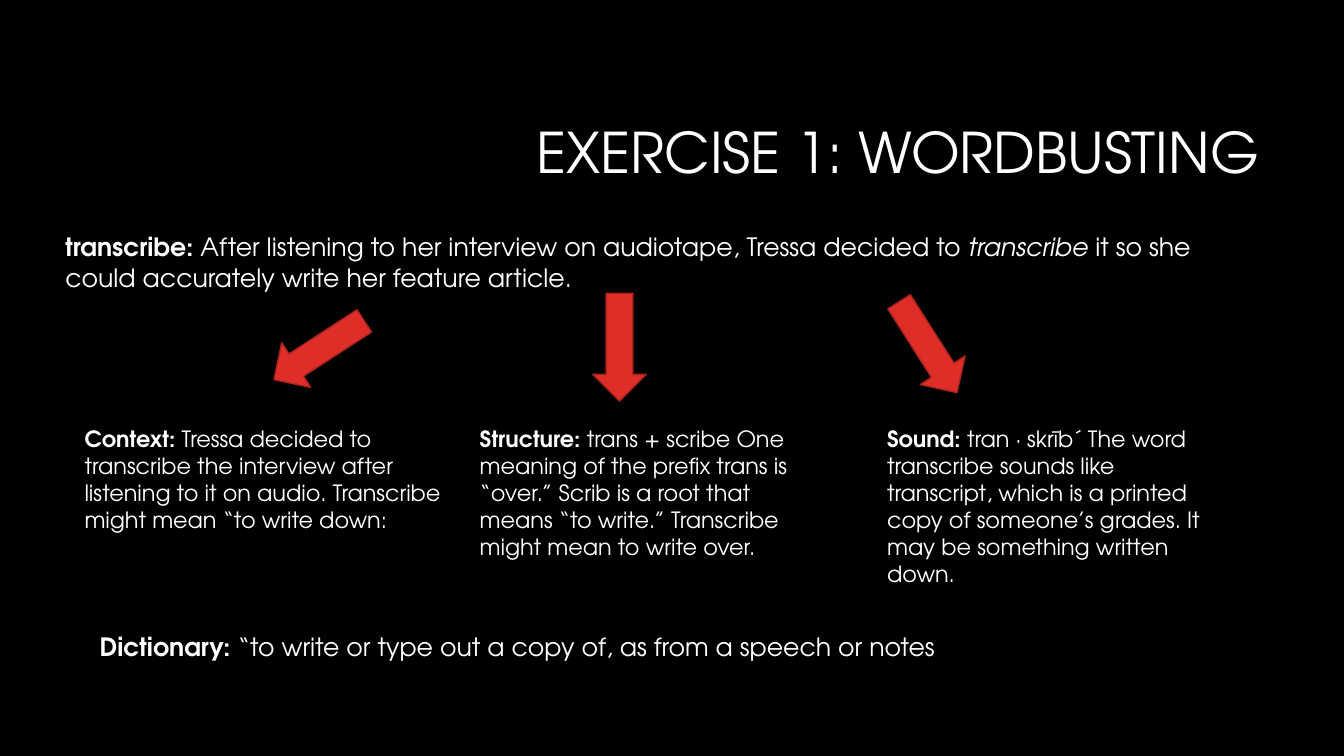
from pptx import Presentation
from pptx.dml.color import RGBColor
from pptx.enum.shapes import MSO_SHAPE
from pptx.enum.text import MSO_ANCHOR, MSO_AUTO_SIZE, PP_ALIGN
from pptx.util import Inches, Pt

ARROW = MSO_SHAPE.DOWN_ARROW
MIDDLE = MSO_ANCHOR.MIDDLE
GROW = MSO_AUTO_SIZE.SHAPE_TO_FIT_TEXT
FIXED = MSO_AUTO_SIZE.NONE
RIGHT = PP_ALIGN.RIGHT

FONT = "TeX Gyre Adventor"
HEX = {"back": "000000", "text": "FFFFFF", "arrow": "DF2E28", "edge": "A5221E"}
COLOR = {name: RGBColor.from_string(code) for name, code in HEX.items()}


def add_run(para, text, size, **style):
    run = para.add_run()
    run.text = text
    run.font.color.rgb = COLOR["text"]
    for key, value in {"name": FONT, "size": Pt(size), **style}.items():
        setattr(run.font, key, value)


deck = Presentation()
deck.slide_width, deck.slide_height = Inches(13.33), Inches(7.5)
slide = deck.slides.add_slide(deck.slide_layouts[5])
slide.background.fill.solid()
slide.background.fill.fore_color.rgb = COLOR["back"]

# Title
title = slide.shapes.title
title.left, title.top = Inches(3.17), Inches(0.84)
title.width, title.height = Inches(9.42), Inches(1.41)
frame = title.text_frame
for key, value in {"vertical_anchor": MIDDLE, "word_wrap": True,
                   "auto_size": FIXED}.items():
    setattr(frame, key, value)
para = frame.paragraphs[0]
para.alignment = RIGHT
para.line_spacing = 0.9
add_run(para, "EXERCISE 1: WORDBUSTING", 40)

# Sentence, three clues and definition: box, size, label, (text, italic) parts
ROW = 4.17
notes = [
    ((0.55, 2.25, 11.9, 0.71), 18, "transcribe: ", [
        ("After listening to her interview on audiotape, Tressa decided to ", False),
        ("transcribe", True),
        (" it so she could accurately write her feature article.", False)]),
    ((0.74, ROW, 3.76, 1.45), 16, "Context: ", [
        ("Tressa decided to transcribe the interview after listening to it on "
         "audio. Transcribe might mean “to write down:", False)]),
    ((4.66, ROW, 3.43, 1.45), 16, "Structure: ", [
        ("trans + scribe One meaning of the prefix trans is “over.” Scrib is a "
         "root that means “to write.” Transcribe might mean to write over.", False)]),
    ((8.7, ROW, 3.4, 1.72), 16, "Sound: ", [
        ("tran · skrīb´ The word transcribe sounds like transcript, which is a "
         "printed copy of someone’s grades. It may be something written down.", False)]),
    ((0.89, 6.21, 11.81, 0.4), 18, "Dictionary: ", [
        ("“to write or type out a copy of, as from a speech or notes", False)]),
]
for box, size, label, parts in notes:
    frame = slide.shapes.add_textbox(*map(Inches, box)).text_frame
    frame.word_wrap = True
    frame.auto_size = GROW
    para = frame.paragraphs[0]
    add_run(para, label, size, bold=True)
    for text, slant in parts:
        add_run(para, text, size, italic=slant)

# Arrows from the sentence to each clue
for left, top, turn in [(2.9, 2.94, 57), (5.88, 2.91, 0), (8.94, 2.91, 327.5)]:
    arrow = slide.shapes.add_shape(
        ARROW, Inches(left), Inches(top), Inches(0.53), Inches(1.07))
    arrow.rotation = turn
    arrow.shadow.inherit = False
    arrow.fill.solid()
    arrow.fill.fore_color.rgb = COLOR["arrow"]
    arrow.line.color.rgb = COLOR["edge"]
    arrow.line.width = Pt(1)

deck.save("out.pptx")
